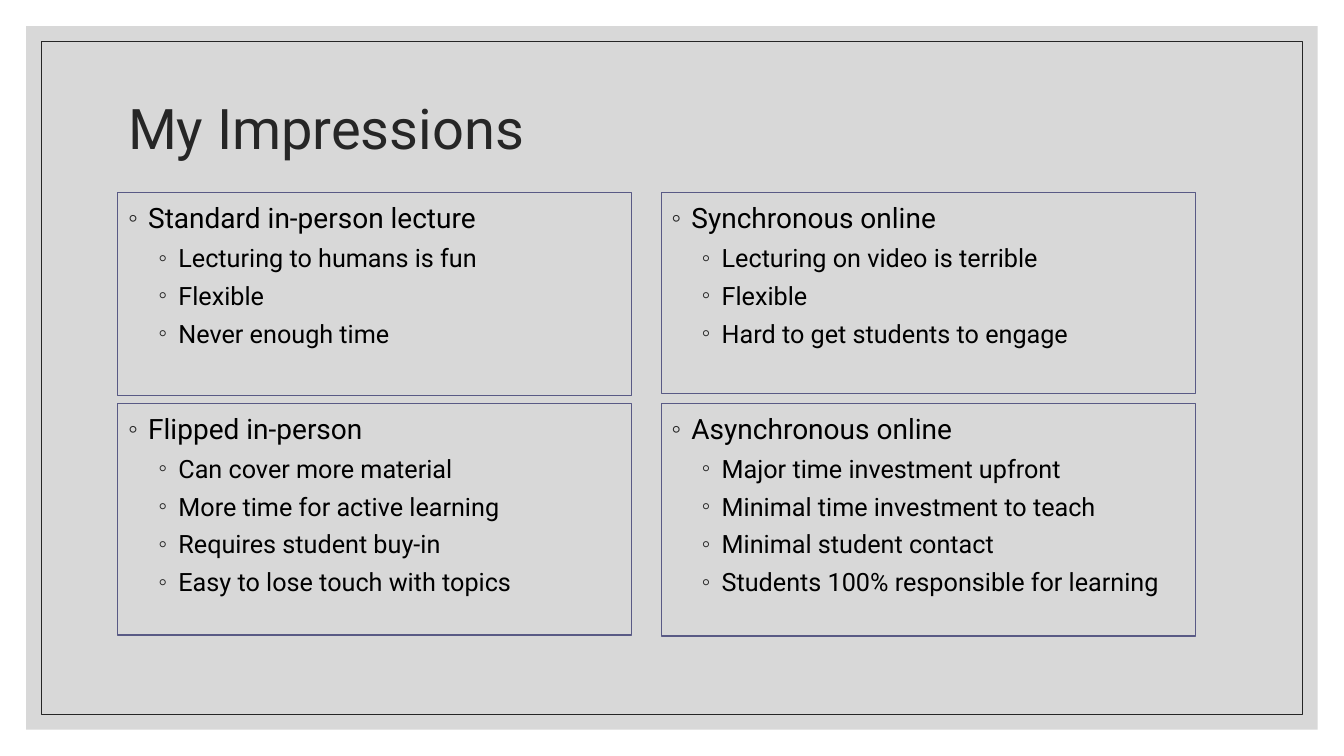
from lxml import etree
from pptx import Presentation
from pptx.dml.color import RGBColor
from pptx.enum.shapes import MSO_SHAPE
from pptx.enum.text import MSO_ANCHOR, MSO_AUTO_SIZE, PP_ALIGN
from pptx.oxml.ns import qn
from pptx.util import Pt

RECTANGLE = MSO_SHAPE.RECTANGLE
TOP, MIDDLE = MSO_ANCHOR.TOP, MSO_ANCHOR.MIDDLE
NO_AUTOFIT = MSO_AUTO_SIZE.NONE
LEFT = PP_ALIGN.LEFT

FONT = "Roboto"
PANEL_GREY = RGBColor(0xBF, 0xBF, 0xBF)
DARK = RGBColor(0x26, 0x26, 0x26)
BORDER = RGBColor(0x59, 0x5A, 0x85)
BLACK = RGBColor(0, 0, 0)

SLIDE_WIDTH, SLIDE_HEIGHT = 960, 540
COMPARISON_LAYOUT = 4
LEFT_X, RIGHT_X = 84.24, 472.32
LEFT_WIDTH, RIGHT_WIDTH = 367.2, 381.6
UPPER_Y, LOWER_Y = 137.52, 288

# Placeholder index, (left, top, width, height), heading, points
LISTS = [
    (1, (LEFT_X, UPPER_Y, LEFT_WIDTH, 144.72), "Standard in-person lecture",
     ["Lecturing to humans is fun", "Flexible", "Never enough time"]),
    (2, (LEFT_X, LOWER_Y, LEFT_WIDTH, 165.6), "Flipped in-person",
     ["Can cover more material", "More time for active learning",
      "Requires student buy-in", "Easy to lose touch with topics"]),
    (3, (RIGHT_X, UPPER_Y, RIGHT_WIDTH, 143.28), "Synchronous online",
     ["Lecturing on video is terrible", "Flexible",
      "Hard to get students to engage"]),
    (4, (RIGHT_X, LOWER_Y, RIGHT_WIDTH, 166.32), "Asynchronous online",
     ["Major time investment upfront", "Minimal time investment to teach",
      "Minimal student contact", "Students 100% responsible for learning"]),
]


def place(shape, left, top, width, height):
    shape.left, shape.top = Pt(left), Pt(top)
    shape.width, shape.height = Pt(width), Pt(height)


def style_font(para, size, color):
    para.font.name = FONT
    para.font.size = Pt(size)
    para.font.bold = False
    para.font.color.rgb = color


def add_margin_rectangle(slide, margin):
    """Add a rectangle at an equal distance from all slide edges."""
    box = slide.shapes.add_shape(
        RECTANGLE, Pt(margin), Pt(margin),
        Pt(SLIDE_WIDTH - 2 * margin), Pt(SLIDE_HEIGHT - 2 * margin))
    box.shadow.inherit = False
    return box


def add_background(slide):
    panel = add_margin_rectangle(slide, 18.72)
    panel.fill.solid()
    panel.fill.fore_color.rgb = PANEL_GREY
    panel.line.fill.background()
    color = panel.element.spPr.find(".//" + qn("a:srgbClr"))
    etree.SubElement(color, qn("a:alpha"), val="60000")

    frame = add_margin_rectangle(slide, 29.52)
    frame.fill.background()
    frame.line.color.rgb = DARK
    frame.line.width = Pt(0.5)

    # Send both behind the placeholders
    tree = panel.element.getparent()
    for position, box in enumerate((panel, frame), start=2):
        tree.insert(position, box.element)


def fill_title(title, text):
    place(title, 84.24, 50.4, 792, 87.12)
    title.text_frame.auto_size = NO_AUTOFIT
    title.text_frame.vertical_anchor = MIDDLE
    para = title.text_frame.paragraphs[0]
    para.text = text
    para.alignment = LEFT
    para.line_spacing = 0.9
    style_font(para, 40, DARK)


def add_bullet(para, indent):
    properties = para._p.get_or_add_pPr()
    properties.set("marL", str(Pt(indent)))
    properties.set("indent", str(-Pt(14.4)))
    color = etree.SubElement(properties, qn("a:buClr"))
    etree.SubElement(color, qn("a:srgbClr"), val=str(DARK))
    etree.SubElement(properties, qn("a:buChar"), char="◦")


def fill_list(body, bounds, heading, points):
    place(body, *bounds)
    body.line.color.rgb = BORDER
    body.line.width = Pt(0.75)
    frame = body.text_frame
    frame.auto_size = NO_AUTOFIT
    frame.vertical_anchor = TOP
    frame.text = "\n".join([heading] + points)
    for number, para in enumerate(frame.paragraphs):
        is_heading = number == 0
        para.level = 0 if is_heading else 1
        para.line_spacing = 1.1 if is_heading else 1.0
        para.space_before = Pt(9 if is_heading else 5.5)
        add_bullet(para, 14.4 if is_heading else 36)
        style_font(para, 20 if is_heading else 18, BLACK)


def main():
    deck = Presentation()
    deck.slide_width, deck.slide_height = Pt(SLIDE_WIDTH), Pt(SLIDE_HEIGHT)
    slide = deck.slides.add_slide(deck.slide_layouts[COMPARISON_LAYOUT])
    add_background(slide)
    fill_title(slide.shapes.title, "My Impressions")
    for index, bounds, heading, points in LISTS:
        fill_list(slide.placeholders[index], bounds, heading, points)
    deck.save("out.pptx")


if __name__ == "__main__":
    main()
